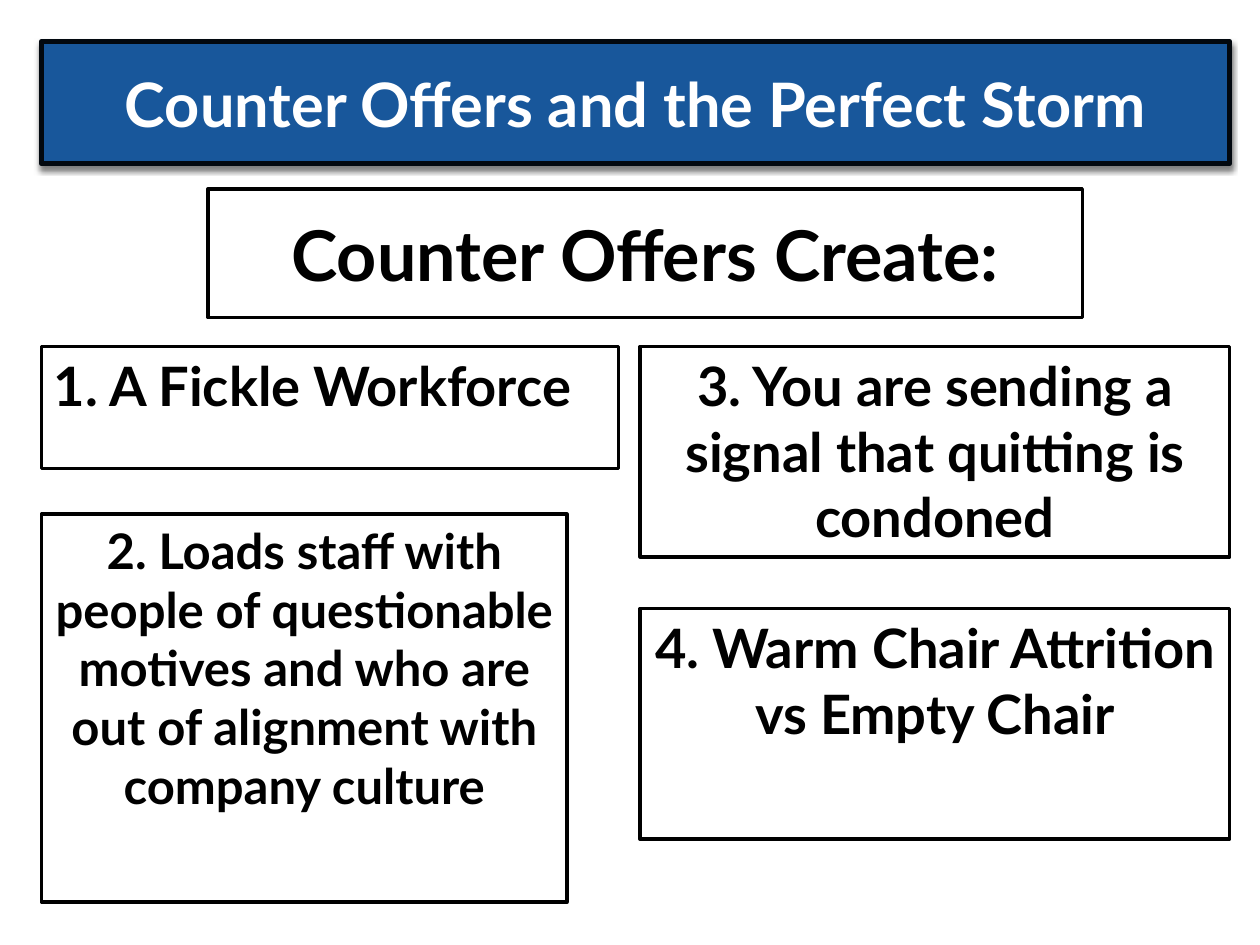
from dataclasses import dataclass

from lxml.etree import SubElement
from pptx import Presentation
from pptx.dml.color import RGBColor
from pptx.enum.shapes import MSO_SHAPE as Shape
from pptx.enum.text import MSO_ANCHOR as Anchor, PP_ALIGN as Align
from pptx.oxml.ns import qn
from pptx.util import Inches, Pt


@dataclass(frozen=True)
class Theme:
    font: str = "Lato"
    banner_fill: str = "18579B"
    banner_line: str = "02080F"
    white: str = "FFFFFF"
    black: str = "000000"
    title_size: int = 35
    heading_size: int = 40
    point_size: int = 31
    long_point_size: int = 28
    banner_line_width: int = 3
    box_line_width: int = 2


THEME = Theme()
TITLE = "Counter Offers and the Perfect Storm"
HEADING = "Counter Offers Create:"

LEFT, RIGHT = 0.33, 9.76
RIGHT_COLUMN = 5.08
RIGHT_WIDTH = RIGHT - RIGHT_COLUMN
POINTS_TOP = 2.75

# text, (left, top, width, height), size, alignment
POINTS = [
    ("1. A Fickle Workforce",
     (LEFT, POINTS_TOP, 4.58, 0.97), THEME.point_size, Align.LEFT),
    ("2. Loads staff with people of questionable motives and who are "
     "out of alignment with company culture",
     (LEFT, 4.08, 4.17, 3.08), THEME.long_point_size, Align.CENTER),
    ("3. You are sending a signal that quitting is condoned",
     (RIGHT_COLUMN, POINTS_TOP, RIGHT_WIDTH, 1.67), THEME.point_size, Align.CENTER),
    ("4. Warm Chair Attrition vs Empty Chair",
     (RIGHT_COLUMN, 4.83, RIGHT_WIDTH, 1.83), THEME.point_size, Align.CENTER),
]


def color(value):
    return RGBColor.from_string(value)


def add_box(slide, text, position, size, alignment=Align.CENTER, anchor=Anchor.TOP,
            fill=THEME.white, line=THEME.black, line_width=THEME.box_line_width,
            text_color=THEME.black):
    shape = slide.shapes.add_shape(Shape.RECTANGLE, *map(Inches, position))
    shape.shadow.inherit = False
    shape.fill.solid()
    shape.fill.fore_color.rgb = color(fill)
    shape.line.color.rgb = color(line)
    shape.line.width = Pt(line_width)
    frame = shape.text_frame
    frame.word_wrap = True
    frame.vertical_anchor = anchor
    paragraph = frame.paragraphs[0]
    paragraph.text = text
    paragraph.alignment = alignment
    font = paragraph.font
    font.name = THEME.font
    font.size = Pt(size)
    font.bold = True
    font.color.rgb = color(text_color)
    return shape


def add_drop_shadow(shape):
    """Put a soft half-transparent shadow straight below the shape."""
    effects = shape.element.spPr.find(qn("a:effectLst"))
    shadow = SubElement(effects, qn("a:outerShdw"), blurRad=str(Pt(3)),
                        dist=str(Pt(2)), dir=str(90 * 60000), rotWithShape="0")
    shade = SubElement(shadow, qn("a:srgbClr"), val=THEME.black)
    SubElement(shade, qn("a:alpha"), val="50000")


def main():
    presentation = Presentation()
    presentation.slide_width = Inches(10)
    presentation.slide_height = Inches(7.5)
    slide = presentation.slides.add_slide(presentation.slide_layouts[6])

    banner = add_box(slide, TITLE, (LEFT, 0.33, RIGHT - LEFT, 0.97), THEME.title_size,
                     anchor=Anchor.MIDDLE, fill=THEME.banner_fill,
                     line=THEME.banner_line, line_width=THEME.banner_line_width,
                     text_color=THEME.white)
    add_drop_shadow(banner)
    add_box(slide, HEADING, (1.65, 1.5, 6.94, 1.02), THEME.heading_size,
            anchor=Anchor.MIDDLE)
    for text, position, size, alignment in POINTS:
        add_box(slide, text, position, size, alignment)

    presentation.save("out.pptx")


if __name__ == "__main__":
    main()
